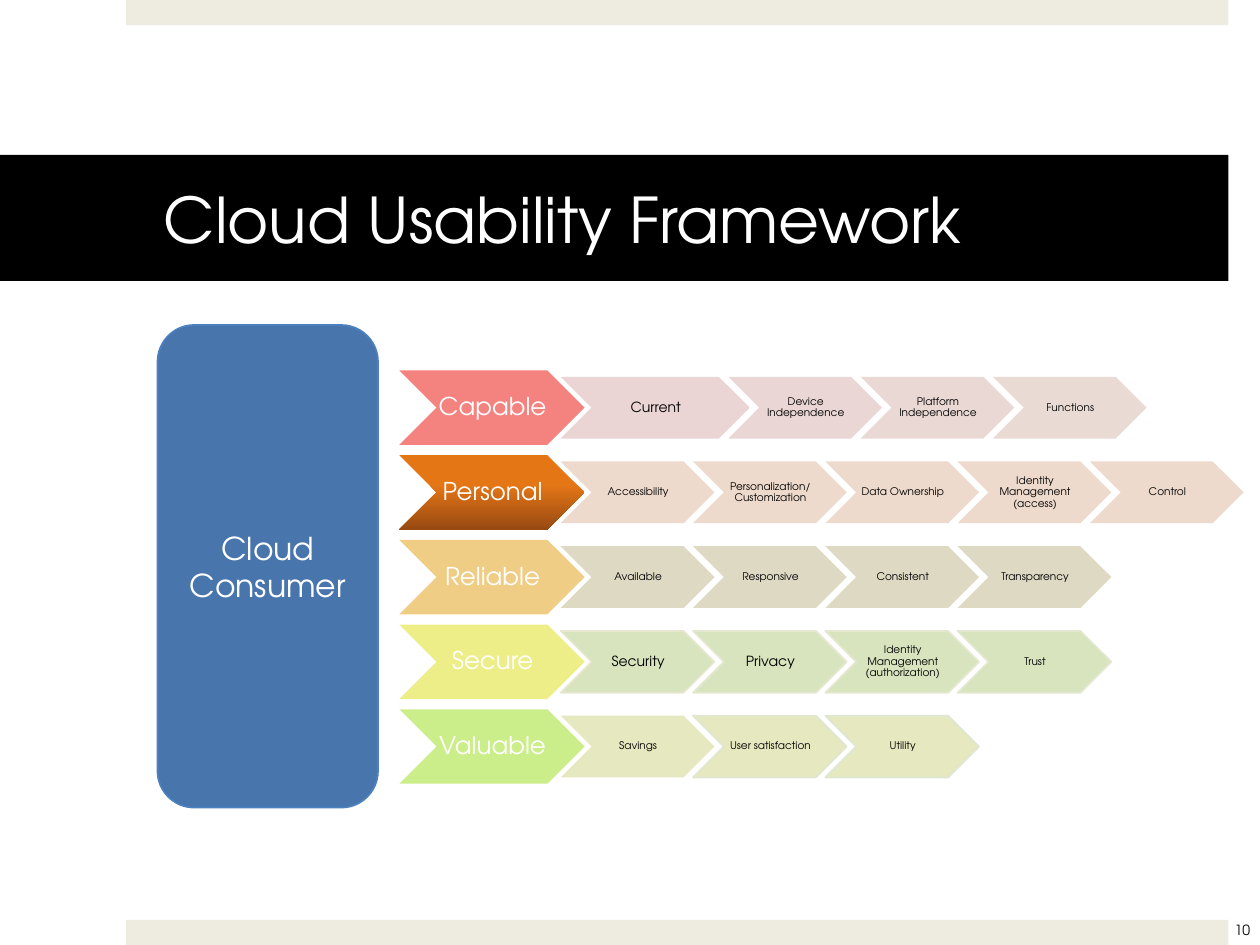
from dataclasses import dataclass

from lxml.etree import SubElement
from pptx import Presentation
from pptx.dml.color import RGBColor
from pptx.enum.shapes import MSO_SHAPE
from pptx.enum.text import MSO_ANCHOR, PP_ALIGN
from pptx.oxml.ns import qn
from pptx.util import Inches, Pt


@dataclass(frozen=True)
class Theme:
    font: str = "TeX Gyre Adventor"
    white: str = "FFFFFF"
    black: str = "000000"
    bar: str = "EEECE1"
    panel: str = "4875AC"
    panel_line: str = "4C81C0"
    title_size: int = 36
    panel_size: int = 18
    heading_size: int = 14
    large_size: int = 8
    small_size: int = 6


@dataclass(frozen=True)
class Item:
    label: str
    fill: str
    line: str | None = None
    size: int = Theme.small_size
    width: float = 1.22
    alpha: int = 100


@dataclass(frozen=True)
class Row:
    heading: str
    fills: tuple
    items: tuple


THEME = Theme()
LARGE = THEME.large_size

ROWS = (
    Row("Capable", ("F4827F",), (
        Item("Current", "E8D0D0", size=LARGE, width=1.5, alpha=90),
        Item("Device Independence", "E8D2D0", alpha=90),
        Item("Platform Independence", "E8D4D0", alpha=90),
        Item("Functions", "E8D6D0", alpha=90),
    )),
    Row("Personal", ("E47616", "984A12"), tuple(
        Item(label, "EDDACC") for label in (
            "Accessibility", "Personalization/ Customization", "Data Ownership",
            "Identity Management (access)", "Control")
    )),
    Row("Reliable", ("F0CD85",), tuple(
        Item(label, "DDD9C3") for label in (
            "Available", "Responsive", "Consistent", "Transparency")
    )),
    Row("Secure", ("EEEE88",), (
        Item("Security", "D7E4BD", "E7E7D1", LARGE),
        Item("Privacy", "D7E4BD", "E6E7D1", LARGE),
        Item("Identity Management (authorization)", "D7E4BD", "E5E7D1"),
        Item("Trust", "D7E4BD", "E3E7D1"),
    )),
    Row("Valuable", ("CCEE8A",), (
        Item("Savings", "BCC152", alpha=37),
        Item("User satisfaction", "BCC152", "E0E7D1", alpha=37),
        Item("Utility", "BCC152", "DEE7D1", alpha=37),
    )),
)


def write_text(shape, text, *, size, color=THEME.white, align=PP_ALIGN.CENTER,
               margins=(0.1, 0.05, 0.1, 0.05), spacing=None):
    frame = shape.text_frame
    frame.word_wrap = True
    frame.vertical_anchor = MSO_ANCHOR.MIDDLE
    (frame.margin_left, frame.margin_top,
     frame.margin_right, frame.margin_bottom) = map(Inches, margins)
    paragraph = frame.paragraphs[0]
    paragraph.alignment = align
    if spacing:
        paragraph.line_spacing = spacing
    run = paragraph.add_run()
    run.text = text
    run.font.name = THEME.font
    run.font.size = Pt(size)
    run.font.color.rgb = RGBColor.from_string(color)


def add_box(slide, kind, box, fills, *, line=None, alpha=100):
    shape = slide.shapes.add_shape(kind, *map(Inches, box))
    shape.shadow.inherit = False
    if len(fills) > 1:
        shape.fill.gradient()
        shape.fill.gradient_angle = 270
        for stop, color, position in zip(shape.fill.gradient_stops, fills, (0.4, 1)):
            stop.color.rgb = RGBColor.from_string(color)
            stop.position = position
    else:
        shape.fill.solid()
        shape.fill.fore_color.rgb = RGBColor.from_string(fills[0])
    if alpha < 100:
        color_element = next(shape.fill._xPr.iter(qn("a:srgbClr")))
        SubElement(color_element, qn("a:alpha"), val=str(alpha * 1000))
    if line:
        shape.line.color.rgb = RGBColor.from_string(line)
        shape.line.width = Pt(1)
    else:
        shape.line.fill.background()
    return shape


def add_label(slide, box, text, **style):
    write_text(slide.shapes.add_textbox(*map(Inches, box)), text, **style)


def add_chevron(slide, box, text, fills, *, size, color, line=None, alpha=100):
    left, top, width, height = box
    add_box(slide, MSO_SHAPE.CHEVRON, box, fills, line=line, alpha=alpha)
    add_label(slide, (left + height / 2, top, width - height, height), text,
              size=size, color=color, margins=(0.01, 0, 0, 0), spacing=0.9)


def add_frame_bars(slide, box):
    left, top, width, height = box
    thickness = 0.2
    for bar_top in (top, top + height - thickness):
        add_box(slide, MSO_SHAPE.RECTANGLE, (left, bar_top, width, thickness), (THEME.bar,))


def add_title(slide, box, text):
    band = add_box(slide, MSO_SHAPE.RECTANGLE, box, (THEME.black,))
    write_text(band, text, size=THEME.title_size, align=PP_ALIGN.LEFT,
               margins=(1.3, 0.05, 0.3, 0.05))


def add_consumer_panel(slide, box, text):
    panel = add_box(slide, MSO_SHAPE.ROUNDED_RECTANGLE, box, (THEME.panel,),
                    line=THEME.panel_line)
    write_text(panel, text, size=THEME.panel_size)


def add_row(slide, box, row):
    left, top, width, height = box
    item_height, inset, overlap = 0.49, 0.05, 0.17
    add_chevron(slide, box, row.heading, row.fills,
                size=THEME.heading_size, color=THEME.white)
    item_left = left + width - 0.19
    for item in row.items:
        add_chevron(slide, (item_left, top + inset, item.width, item_height),
                    item.label, (item.fill,), size=item.size, color=THEME.black,
                    line=item.line, alpha=item.alpha)
        item_left += item.width - overlap


def add_framework(slide, box, rows):
    left, top, width, height = box
    row_height = 0.59
    pitch = (height - row_height) / (len(rows) - 1)
    for index, row in enumerate(rows):
        add_row(slide, (left, top + index * pitch, width, row_height), row)


def main():
    presentation = Presentation()
    presentation.slide_width = Inches(10)
    presentation.slide_height = Inches(7.5)
    slide = presentation.slides.add_slide(presentation.slide_layouts[6])
    add_frame_bars(slide, (1, 0, 8.75, 7.5))
    add_title(slide, (0, 1.23, 9.75, 1), "Cloud Usability Framework")
    add_framework(slide, (3.17, 2.94, 1.47, 3.28), ROWS)
    add_label(slide, (9.61, 7.18, 0.5, 0.4), "10", size=LARGE, color=THEME.black)
    add_consumer_panel(slide, (1.25, 2.58, 1.75, 3.83), "Cloud Consumer")
    presentation.save("out.pptx")


if __name__ == "__main__":
    main()
